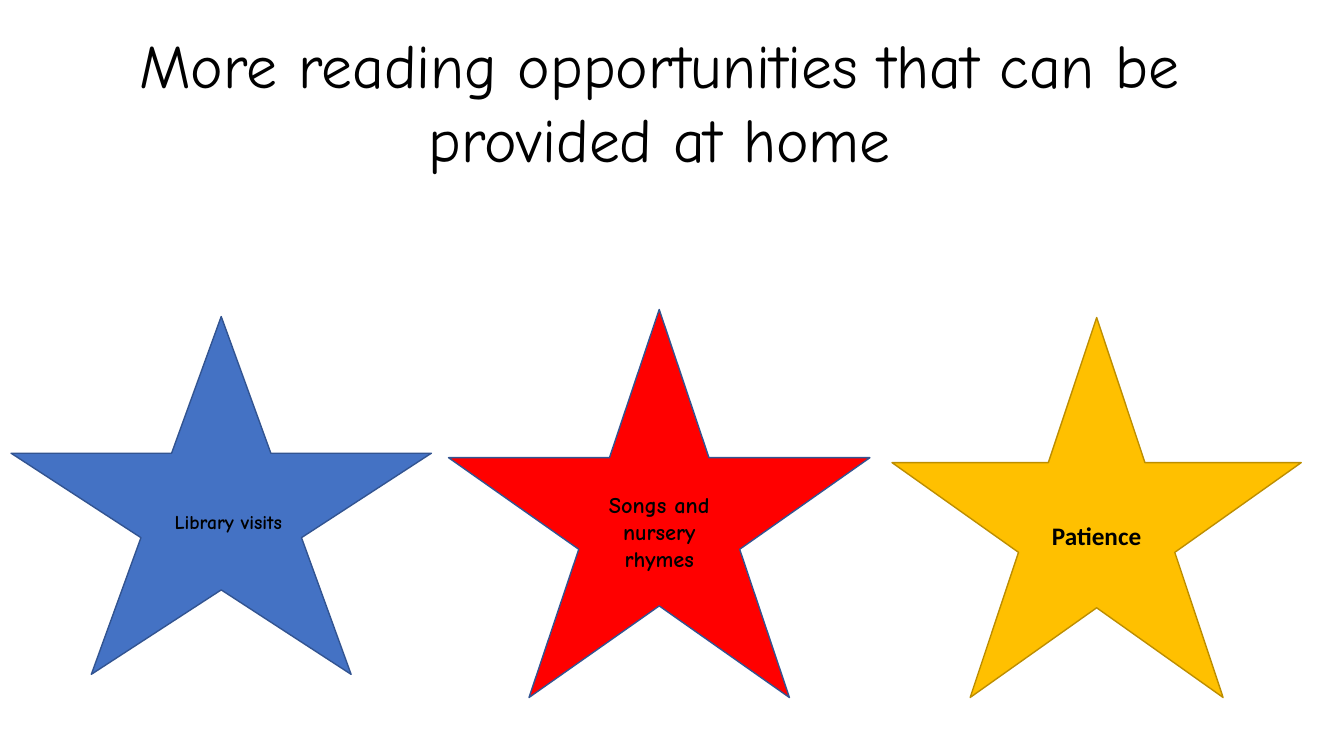
from pptx import Presentation, util as u
from pptx.dml.color import RGBColor
from pptx.enum import shapes, text

COLUMNS, ROWS = 40, 22.5
STARS = [
    ("Library visits", (0.33, 9.42, 12.51, 10.65), "4472C4", "325491",
     dict(size=14, left_inset=0.24)),
    ("Songs and nursery rhymes", (13.35, 9.21, 12.54, 11.55), "FF0000", "325491",
     dict(size=16)),
    ("Patience", (26.55, 9.45, 12.18, 11.31), "FFC000", "BD8E00",
     dict(size=18, font="Calibri")),
]


def color(value):
    return RGBColor.from_string(value)


def write(shape, words, size, font="Comic Neue", bold=False, ink="000000",
          anchor=text.MSO_ANCHOR.MIDDLE, left_inset=0.1):
    frame = shape.text_frame
    frame.word_wrap = True
    frame.vertical_anchor = anchor
    frame.margin_left = u.Inches(left_inset)
    paragraph = frame.paragraphs[0]
    paragraph.alignment = text.PP_ALIGN.CENTER
    run = paragraph.add_run()
    run.text = words
    run.font.name = font
    run.font.size = u.Pt(size)
    run.font.bold = bold
    run.font.color.rgb = color(ink)


class Deck:
    """Hold the slide grid and draw the title and stars on the current slide."""

    def __init__(self):
        self.presentation = Presentation()
        self.presentation.slide_width = u.Inches(13.33)
        self.presentation.slide_height = u.Inches(7.5)
        self.slide = self.presentation.slides.add_slide(
            self.presentation.slide_layouts[6])

    def place(self, box):
        column = self.presentation.slide_width / COLUMNS
        row = self.presentation.slide_height / ROWS
        left, top, width, height = box
        return [int(n) for n in
                (left * column, top * row, width * column, height * row)]

    def title(self, words, box):
        shape = self.slide.shapes.add_textbox(*self.place(box))
        write(shape, words, 44, anchor=text.MSO_ANCHOR.TOP)

    def star(self, words, box, fill, line, style):
        shape = self.slide.shapes.add_shape(
            shapes.MSO_SHAPE.STAR_5_POINT, *self.place(box))
        shape.shadow.inherit = False
        shape.fill.solid()
        shape.fill.fore_color.rgb = color(fill)
        shape.line.color.rgb = color(line)
        shape.line.width = u.Pt(1)
        write(shape, words, bold=True, **style)


def main():
    deck = Deck()
    deck.title("More reading opportunities that can be provided at home",
               (1.35, 0.66, 36.57, 4.74))
    for star in STARS:
        deck.star(*star)
    deck.presentation.save("out.pptx")


if __name__ == "__main__":
    main()
